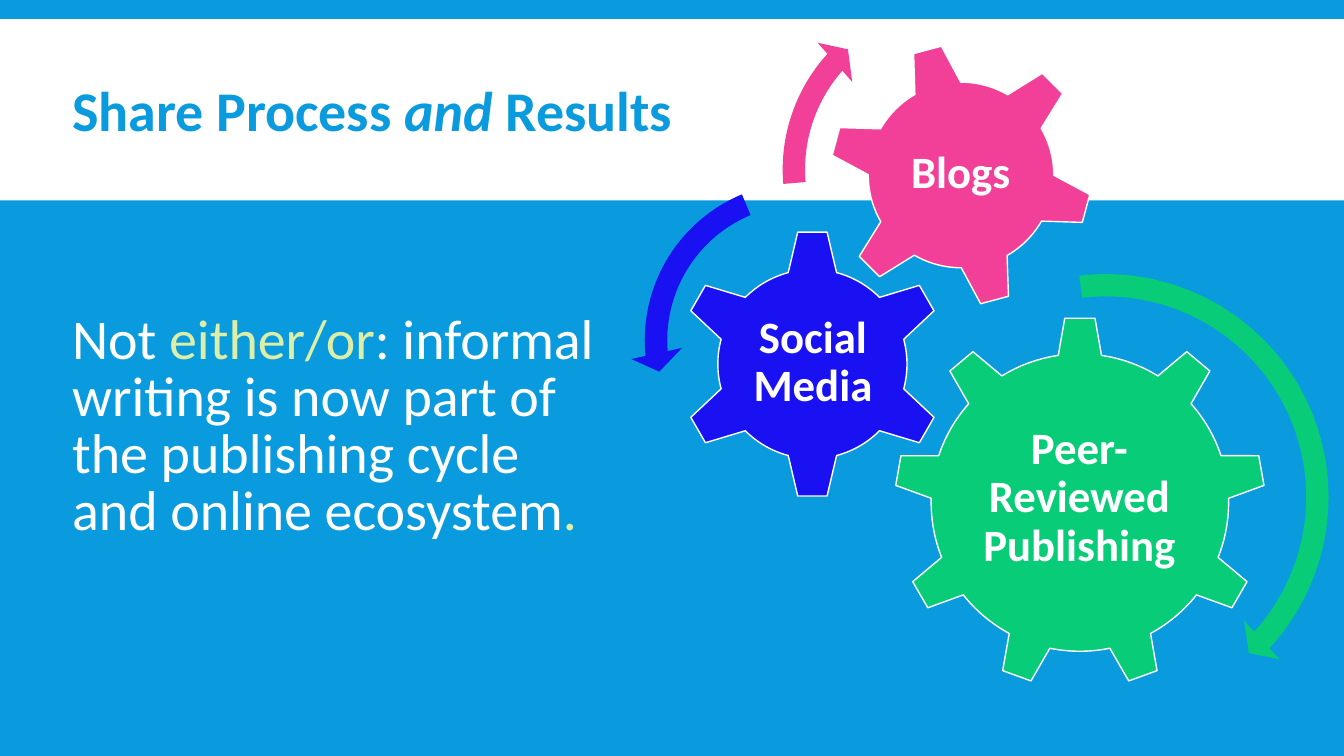
from pptx import Presentation, util as u
from pptx.dml.color import RGBColor
from pptx.enum import shapes, text

INK = {"sky": "099BDD", "white": "FFFFFF", "lime": "DCEEA7",
       "green": "08CC78", "blue": "1911F2", "pink": "F24099"}
KIND = shapes.MSO_SHAPE


def tint(name):
    return RGBColor.from_string(INK[name])


class Deck:
    font = "Calibri"

    def __init__(self):
        self.prs = Presentation()
        self.prs.slide_width = u.Cm(33.87)
        self.prs.slide_height = u.Cm(19.05)
        self.slide = self.prs.slides.add_slide(self.prs.slide_layouts[6])
        fill = self.slide.background.fill
        fill.solid()
        fill.fore_color.rgb = tint("sky")

    def shape(self, kind, box, color, edge=None):
        item = self.slide.shapes.add_shape(kind, *map(u.Cm, box))
        item.shadow.inherit = False
        item.fill.solid()
        item.fill.fore_color.rgb = tint(color)
        if edge:
            item.line.color.rgb = tint(edge)
            item.line.width = u.Pt(1)
        else:
            item.line.fill.background()
        return item

    def frame(self, box, pad=None, anchor=text.MSO_ANCHOR.MIDDLE):
        frame = self.slide.shapes.add_textbox(*map(u.Cm, box)).text_frame
        frame.word_wrap = True
        frame.vertical_anchor = anchor
        if pad is not None:
            frame.margin_left = frame.margin_right = u.Cm(pad)
            frame.margin_top = frame.margin_bottom = u.Cm(pad)
        return frame

    def style(self, run, size, color, bold=False, slant=False):
        run.font.name = self.font
        run.font.size = u.Pt(size)
        run.font.color.rgb = tint(color)
        run.font.bold = bold
        run.font.italic = slant

    def rich(self, box, parts, space=None, bold=False, **look):
        para = self.frame(box, **look).paragraphs[0]
        para.line_spacing = space
        for words, color, slant in parts:
            run = para.add_run()
            run.text = words
            self.style(run, 40, color, bold, slant)

    def gear(self, kind, left, top, side, color, turn=0):
        item = self.shape(kind, (left, top, side, side), color, "white")
        item.rotation = turn

    def label(self, box, words):
        para = self.frame(box, pad=0.1).paragraphs[0]
        para.text = words
        para.alignment = text.PP_ALIGN.CENTER
        para.line_spacing = 0.9
        for run in para.runs:
            self.style(run, 32, "white", bold=True)

    def arrow(self, kind, left, top, side, color, thick, angles, head):
        item = self.shape(kind, (left, top, side, side), color)
        values = [thick / 100, *(0.6 * deg for deg in angles), head / 100]
        for i, value in enumerate(values):
            item.adjustments[i] = value


def main():
    deck = Deck()
    deck.shape(KIND.RECTANGLE, (0, 0.48, 33.87, 4.57), "white")
    deck.rich((1.57, 5.21, 13.67, 11.15), [
        ("Not ", "white", False),
        ("either/or", "lime", False),
        (": informal writing is now part of the publishing cycle "
         "and online ecosystem", "white", False),
        (".", "lime", False)], space=0.85)

    deck.gear(KIND.GEAR_9, 22.53, 7.98, 9.37, "green")
    deck.label((24.41, 10.16, 5.59, 4.8), "Peer-Reviewed\vPublishing")
    deck.gear(KIND.GEAR_6, 17.07, 5.77, 6.81, "blue")
    deck.label((18.8, 7.47, 3.38, 3.35), "Social\vMedia")
    deck.gear(KIND.GEAR_6, 20.88, 1.07, 6.68, "pink", turn=345)
    deck.label((22.35, 2.51, 3.73, 3.73), "Blogs")

    deck.arrow(KIND.CIRCULAR_ARROW, 21.87, 6.53, 11.99, "green",
               4.7, (4.98, 42.48, 263.21), 5.5)
    deck.arrow(KIND.LEFT_CIRCULAR_ARROW, 15.88, 4.22, 8.71, "blue",
               6.5, (7.17, 174.82, 247.3), 7.5)
    deck.arrow(KIND.CIRCULAR_ARROW, 19.35, -0.43, 9.4, "pink",
               6, (6.57, 221.9, 175.14), 7)

    deck.rich((1.57, 1.78, 19.18, 1.96), [
        ("Share Process ", "sky", False),
        ("and", "sky", True),
        (" Results", "sky", False)], bold=True, anchor=text.MSO_ANCHOR.TOP)
    deck.prs.save("out.pptx")


if __name__ == "__main__":
    main()
